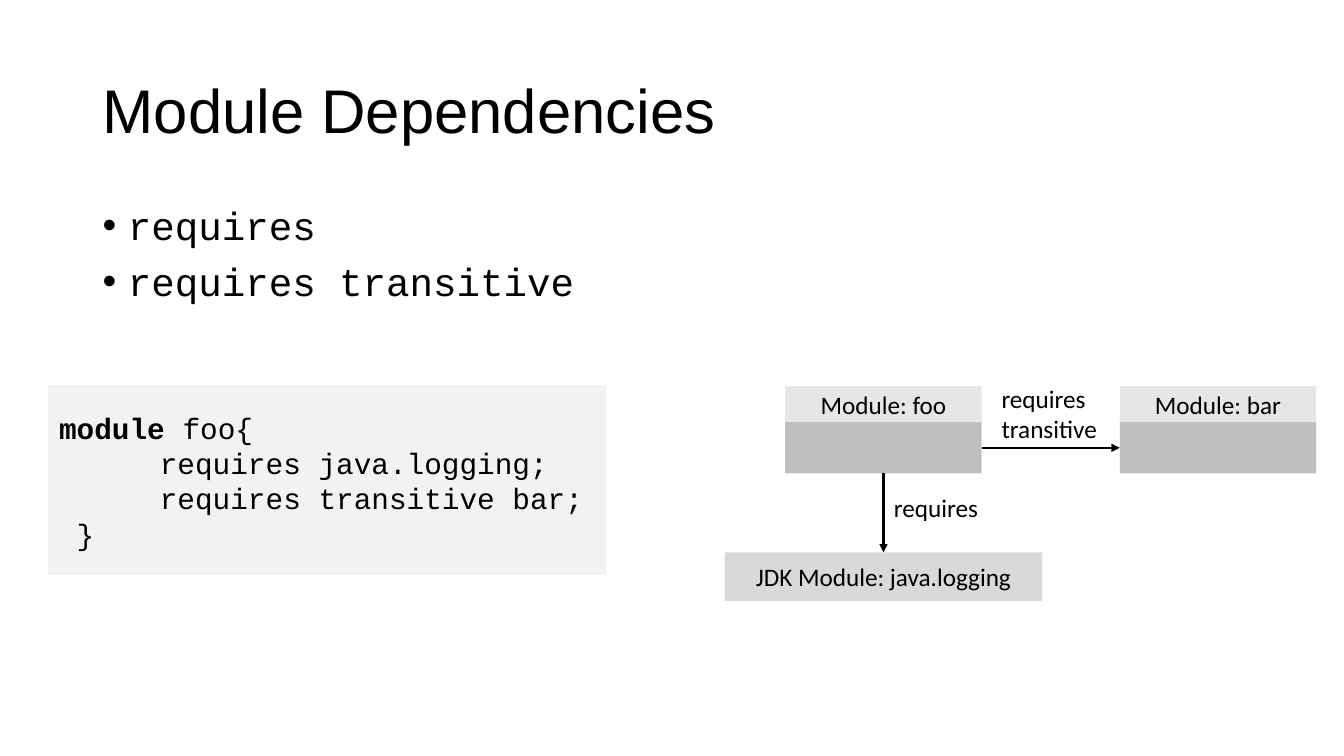
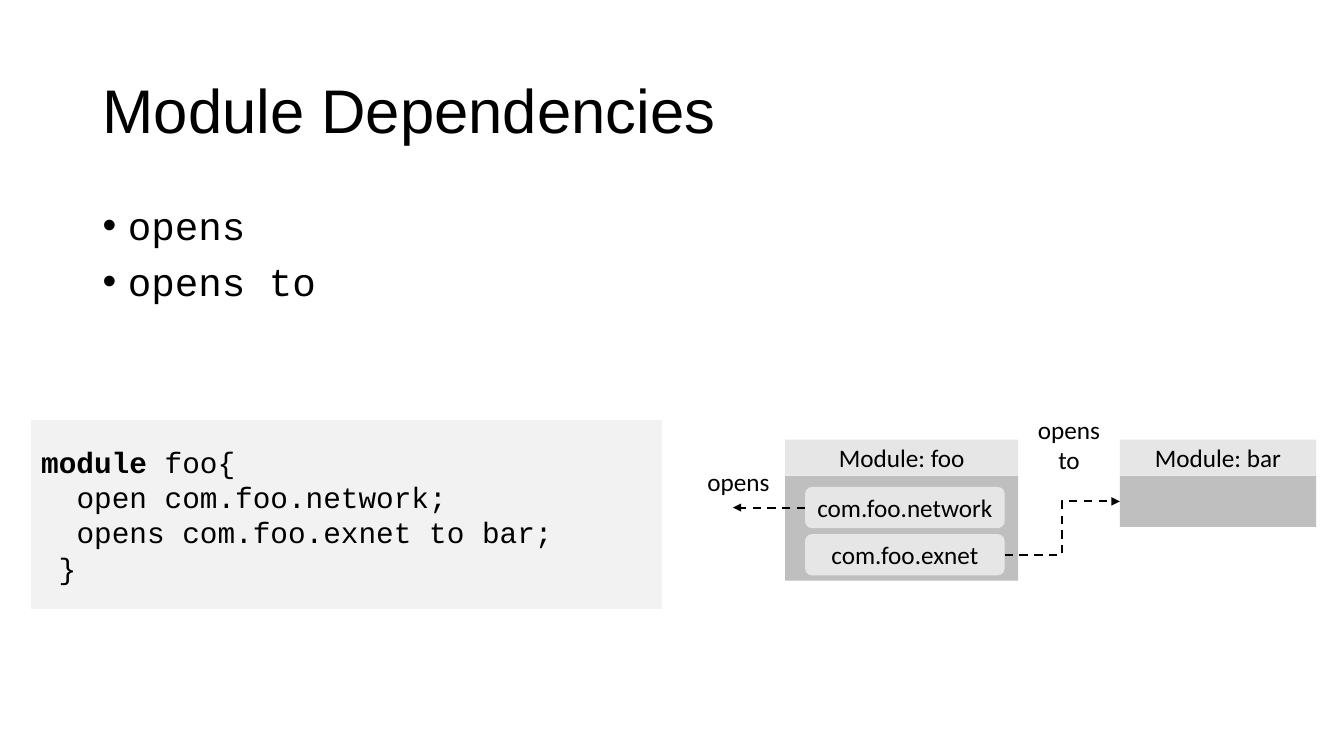
from pptx import Presentation
from pptx.dml.color import RGBColor
from pptx.enum.dml import MSO_LINE
from pptx.enum.shapes import MSO_CONNECTOR, MSO_SHAPE
from pptx.enum.text import MSO_ANCHOR, MSO_AUTO_SIZE, PP_ALIGN
from pptx.oxml.ns import qn
from pptx.util import Cm, Pt
from lxml import etree

RECT, ROUND = MSO_SHAPE.RECTANGLE, MSO_SHAPE.ROUNDED_RECTANGLE
STRAIGHT, ELBOW = MSO_CONNECTOR.STRAIGHT, MSO_CONNECTOR.ELBOW
LEFT, CENTER = PP_ALIGN.LEFT, PP_ALIGN.CENTER
TOP, MIDDLE = MSO_ANCHOR.TOP, MSO_ANCHOR.MIDDLE
BOTTOM_SITE, LEFT_SITE, RIGHT_SITE, TOP_SITE = 2, 1, 3, 0

COLORS = {"text": "000000", "code": "F2F2F2", "header": "E7E6E6",
          "body": "BFBFBF", "jdk": "D9D9D9"}
FONTS = {
    "title": {"name": "Arial", "size": Pt(44)},
    "bullet": {"name": "Courier New", "size": Pt(28)},
    "code": {"name": "Courier New", "size": Pt(21)},
    "label": {"name": "Calibri", "size": Pt(18)},
}

# Content: code lines are (indent in cm, keyword, rest)
TITLE = "Module Dependencies"
REQUIRES = {
    "bullets": ["requires", "requires transitive"],
    "body_height": 3.23,
    "code_at": (1.24, 9.73, 14.02, 4.75),
    "code": [(0, "module", " foo{"),
             (2.54, "", "requires java.logging;"),
             (2.54, "", "requires transitive bar;"),
             (0.44, "", "}")],
}
OPENS = {
    "bullets": ["opens", "opens to"],
    "body_height": 12.09,
    "code_at": (0.79, 10.59, 15.88, 4.75),
    "code": [(0, "module", " foo{"),
             (0.89, "", "open com.foo.network;"),
             (0.89, "", "opens com.foo.exnet to bar;"),
             (0.44, "", "}")],
}
PACKAGES = ["com.foo.network", "com.foo.exnet"]

# Module diagram measures, in cm
FOO_X, BAR_X = 19.79, 28.22
MODULE_W, HEADER_H, MODULE_H = 4.95, 0.91, 1.29


def rgb(key):
    return RGBColor.from_string(COLORS[key])


def add_run(p, text, font, bold=False):
    r = p.add_run()
    r.text = text
    for attr, value in {**FONTS[font], "bold": bold}.items():
        setattr(r.font, attr, value)
    r.font.color.rgb = rgb("text")


def add_lines(tf, lines, font, **fmt):
    """Write one paragraph per line, each with the given paragraph format."""
    for i, line in enumerate(lines):
        p = tf.paragraphs[0] if i == 0 else tf.add_paragraph()
        for attr, value in fmt.items():
            setattr(p, attr, value)
        add_run(p, line, font)


def set_indent(p, left, first=0):
    pPr = p._p.get_or_add_pPr()
    pPr.set("marL", str(Cm(left)))
    pPr.set("indent", str(Cm(first)))


def fill_placeholder(sp, at, lines, font, anchor, **fmt):
    sp.left, sp.top, sp.width, sp.height = map(Cm, at)
    tf = sp.text_frame
    tf.auto_size, tf.vertical_anchor = MSO_AUTO_SIZE.NONE, anchor
    add_lines(tf, lines, font, alignment=LEFT, line_spacing=0.9, **fmt)


def add_box(slide, at, fill, text="", kind=RECT):
    sp = slide.shapes.add_shape(kind, *map(Cm, at))
    sp.shadow.inherit = False
    sp.fill.solid()
    sp.fill.fore_color.rgb = rgb(fill)
    sp.line.fill.background()
    tf = sp.text_frame
    tf.vertical_anchor, tf.word_wrap = MIDDLE, False
    if text:
        add_lines(tf, [text], "label", alignment=CENTER)
    return sp


def add_code(slide, at, lines):
    sp = add_box(slide, at, "code")
    sp.line.color.rgb, sp.line.width = rgb("code"), Pt(1)
    tf = sp.text_frame
    tf.word_wrap = True
    for i, (indent, keyword, rest) in enumerate(lines):
        p = tf.paragraphs[0] if i == 0 else tf.add_paragraph()
        p.alignment = LEFT
        set_indent(p, indent)
        if keyword:
            add_run(p, keyword, "code", bold=True)
        add_run(p, rest, "code")


def add_label(slide, at, lines, align=LEFT, wrap=False):
    tf = slide.shapes.add_textbox(*map(Cm, at)).text_frame
    tf.word_wrap = wrap
    add_lines(tf, lines, "label", alignment=align)


def add_module(slide, x, y, name, width=MODULE_W, height=MODULE_H):
    """Draw header and body; return the body, to which arrows attach."""
    body = add_box(slide, (x, y + HEADER_H, width, height), "body")
    add_box(slide, (x, y, width, HEADER_H), "header", f"Module: {name}")
    return body


def site_point(sp, site):
    dx, dy = {TOP_SITE: (1, 0), LEFT_SITE: (0, 1),
              BOTTOM_SITE: (1, 2), RIGHT_SITE: (2, 1)}[site]
    return sp.left + sp.width * dx // 2, sp.top + sp.height * dy // 2


def add_arrow(slide, start, start_site, end=None, end_site=None,
              end_x=None, kind=STRAIGHT, dashed=False):
    """Join two shapes, or run level from one shape to end_x."""
    x1, y1 = site_point(start, start_site)
    x2, y2 = site_point(end, end_site) if end else (Cm(end_x), y1)
    c = slide.shapes.add_connector(kind, x1, y1, x2, y2)
    c.begin_connect(start, start_site)
    if end:
        c.end_connect(end, end_site)
    c.line.color.rgb, c.line.width = rgb("text"), Pt(1.5)
    if dashed:
        c.line.dash_style = MSO_LINE.DASH
    etree.SubElement(c.line._get_or_add_ln(), qn("a:tailEnd"), type="triangle")
    etree.SubElement(c._element.spPr, qn("a:effectLst"))


def add_content_slide(prs, content):
    """Build what both slides share: title, bullets and code."""
    slide = prs.slides.add_slide(prs.slide_layouts[1])
    title, body = slide.placeholders
    fill_placeholder(title, (2.33, 1.01, 29.21, 3.68), [TITLE], "title", MIDDLE)
    fill_placeholder(body, (2.33, 5.07, 29.21, content["body_height"]),
                     content["bullets"], "bullet", TOP, space_before=Pt(10))
    for p in body.text_frame.paragraphs:
        set_indent(p, 0.64, -0.64)
    add_code(slide, content["code_at"], content["code"])
    return slide


def draw_requires(slide):
    y, jdk_w = 9.73, 8
    foo = add_module(slide, FOO_X, y, "foo")
    bar = add_module(slide, BAR_X, y, "bar")
    jdk_x = FOO_X + (MODULE_W - jdk_w) / 2
    jdk = add_box(slide, (jdk_x, 13.92, jdk_w, 1.22), "jdk",
                  "JDK Module: java.logging")
    add_arrow(slide, foo, BOTTOM_SITE, jdk, TOP_SITE)
    add_arrow(slide, foo, RIGHT_SITE, bar, LEFT_SITE)
    add_label(slide, (22.28, 12.27, 2.67, 1.02), ["requires"])
    add_label(slide, (24.99, 9.53, 3, 1.8), ["requires transitive"], wrap=True)


def draw_opens(slide):
    y = 11.08
    add_module(slide, FOO_X, y, "foo", 5.87, 2.64)
    bar = add_module(slide, BAR_X, y, "bar")
    network, exnet = [
        add_box(slide, (FOO_X + 0.5, 12.27 + 1.19 * i, 5.03, 1.04),
                "header", name, ROUND)
        for i, name in enumerate(PACKAGES)]
    add_arrow(slide, network, LEFT_SITE, end_x=18.47, dashed=True)
    add_arrow(slide, exnet, RIGHT_SITE, bar, LEFT_SITE, kind=ELBOW, dashed=True)
    add_label(slide, (17.58, 11.63, 2.11, 1.02), ["opens"])
    add_label(slide, (25.3, 10.31, 3.28, 1.8), ["opens", "to"], CENTER, True)


def main():
    prs = Presentation()
    prs.slide_width, prs.slide_height = Cm(33.87), Cm(19.05)
    draw_requires(add_content_slide(prs, REQUIRES))
    draw_opens(add_content_slide(prs, OPENS))
    prs.save("out.pptx")


if __name__ == "__main__":
    main()
